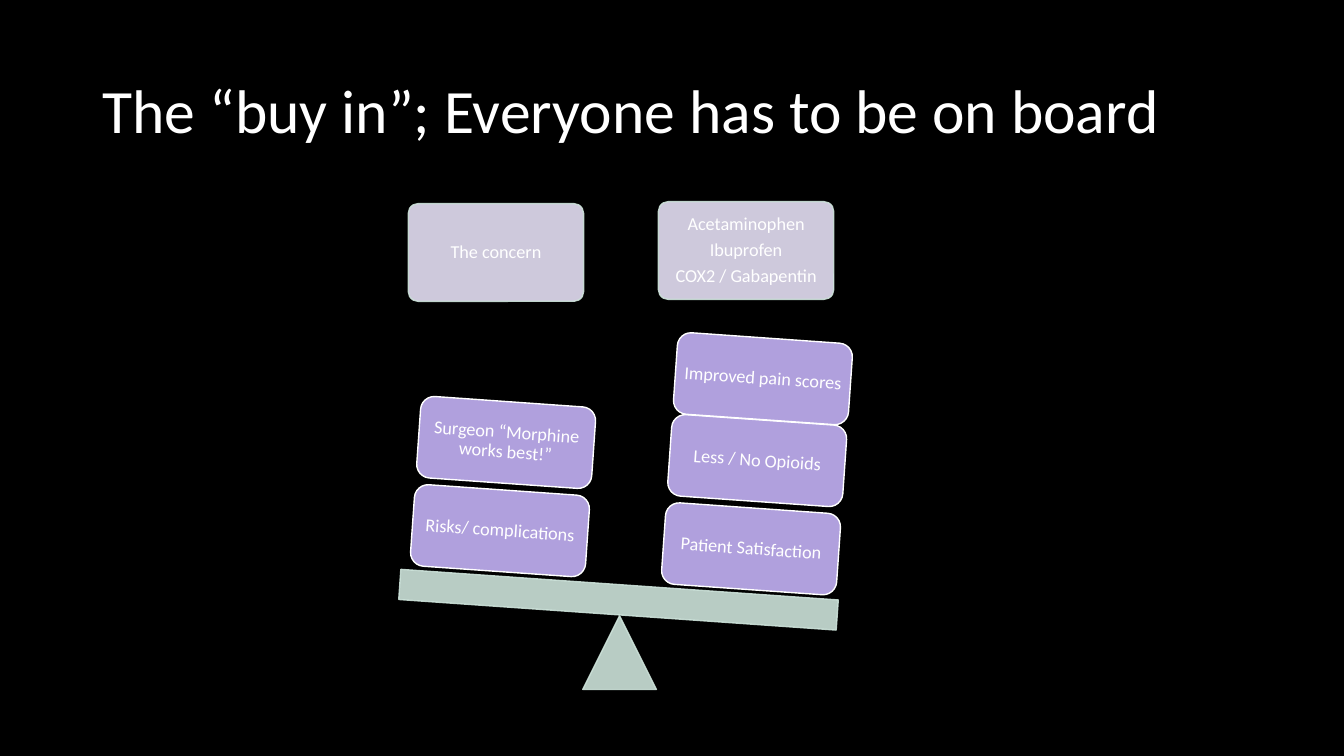
from dataclasses import dataclass
from math import radians, tan

from lxml import etree
from pptx import Presentation
from pptx import util as u
from pptx.dml.color import RGBColor
from pptx.enum import shapes, text
from pptx.oxml import ns

COLORS = {"background": "000000", "white": "FFFFFF", "card": "E5DFF4",
          "scale": "CDE3DA", "block": "B0A0DD"}
WIDTH, HEIGHT = u.Inches(13.33), u.Inches(7.5)
COLUMN, ROW = WIDTH / 100, HEIGHT / 100
TILT = 4
RISES = (0, 11.67, 22.5)
BLOCK_WIDTH, BLOCK_HEIGHT = 13.05, 10.8
ROUNDED = shapes.MSO_SHAPE.ROUNDED_RECTANGLE


@dataclass(frozen=True)
class Piece:
    kind: shapes.MSO_SHAPE
    left: float
    top: float
    width: float
    height: float
    fill: str
    line: str
    lines: tuple[str, ...] = ()
    opacity: int = 100
    rotation: float = 0
    corner: float | None = None


@dataclass(frozen=True)
class Stack:
    left: float
    top: float
    labels: tuple[str, ...]

    def pieces(self) -> list[Piece]:
        """Pile the blocks from the plank upwards along the tilted axis."""
        drift = tan(radians(TILT)) * ROW / COLUMN
        return [Piece(ROUNDED, self.left + rise * drift, self.top - rise,
                      BLOCK_WIDTH, BLOCK_HEIGHT, "block", "white", (label,),
                      rotation=TILT)
                for rise, label in zip(RISES, self.labels)]


PIECES = [
    *(Piece(ROUNDED, left, top, BLOCK_WIDTH, 12.93, "card", "scale", lines, 90, corner=0.1)
      for left, top, lines in (
          (30.38, 26.93, ("The concern",)),
          (48.99, 26.67, ("Acetaminophen", "Ibuprofen", "COX2 / Gabapentin")))),
    Piece(shapes.MSO_SHAPE.ISOSCELES_TRIANGLE, 43.36, 81.47, 5.48, 9.73,
          "scale", "scale", opacity=90),
    Piece(shapes.MSO_SHAPE.RECTANGLE, 29.71, 77.33, 32.63, 4,
          "scale", "scale", opacity=90, rotation=TILT),
]
STACKS = [
    Stack(49.36, 67.2, ("Patient Satisfaction", "Less / No Opioids", "Improved pain scores")),
    Stack(30.68, 64.8, ("Risks/ complications", "Surgeon “Morphine works best!”")),
]


def color(name: str) -> RGBColor:
    """Look up a named colour."""
    return RGBColor.from_string(COLORS[name])


def place(left: float, top: float, width: float, height: float) -> list[int]:
    """Turn percentages of the slide into lengths."""
    return [round(share * unit) for share, unit in
            zip((left, top, width, height), (COLUMN, ROW, COLUMN, ROW))]


def apply(target: object, formats: dict[str, object]) -> None:
    """Set each attribute named in the dict."""
    for name, value in formats.items():
        setattr(target, name, value)


def write(shape: object, lines: tuple[str, ...], size: float, inset: float,
          paragraph_format: dict[str, object]) -> None:
    """Fill a shape's text frame with one paragraph per line."""
    frame = shape.text_frame
    apply(frame, {"word_wrap": True, "vertical_anchor": text.MSO_ANCHOR.MIDDLE,
                  "margin_left": u.Inches(inset), "margin_right": u.Inches(inset),
                  "margin_top": u.Inches(0.05), "margin_bottom": u.Inches(0.05)})
    frame.text = "\n".join(lines)
    for paragraph in frame.paragraphs:
        apply(paragraph, {"line_spacing": 0.9, **paragraph_format})
        for run in paragraph.runs:
            apply(run.font, {"name": "Calibri", "size": u.Pt(size)})
            run.font.color.rgb = color("white")


def draw(slide: object, piece: Piece) -> None:
    """Add one piece of the balance to the slide."""
    shape = slide.shapes.add_shape(
        piece.kind, *place(piece.left, piece.top, piece.width, piece.height))
    shape.shadow.inherit = False
    shape.rotation = piece.rotation
    if piece.corner is not None:
        shape.adjustments[0] = piece.corner
    shape.fill.solid()
    shape.fill.fore_color.rgb = color(piece.fill)
    shape.line.color.rgb = color(piece.line)
    shape.line.width = u.Pt(1)
    if piece.opacity < 100:
        for tint in shape.element.spPr.iter(ns.qn("a:srgbClr")):
            etree.SubElement(tint, ns.qn("a:alpha"), val=str(piece.opacity * 1000))
    if piece.lines:
        write(shape, piece.lines, 13, 0.05,
              {"alignment": text.PP_ALIGN.CENTER, "space_after": u.Pt(4.55)})


def main() -> None:
    """Build and save the slide."""
    presentation = Presentation()
    apply(presentation, {"slide_width": WIDTH, "slide_height": HEIGHT})
    slide = presentation.slides.add_slide(presentation.slide_layouts[6])
    slide.background.fill.solid()
    slide.background.fill.fore_color.rgb = color("background")
    title = slide.shapes.add_textbox(*place(6.9, 5.33, 86.25, 19.33))
    write(title, ("The “buy in”; Everyone has to be on board",), 44, 0.1,
          {"alignment": text.PP_ALIGN.LEFT})
    for piece in PIECES:
        draw(slide, piece)
    for stack in STACKS:
        for piece in stack.pieces():
            draw(slide, piece)
    presentation.save("out.pptx")


if __name__ == "__main__":
    main()
